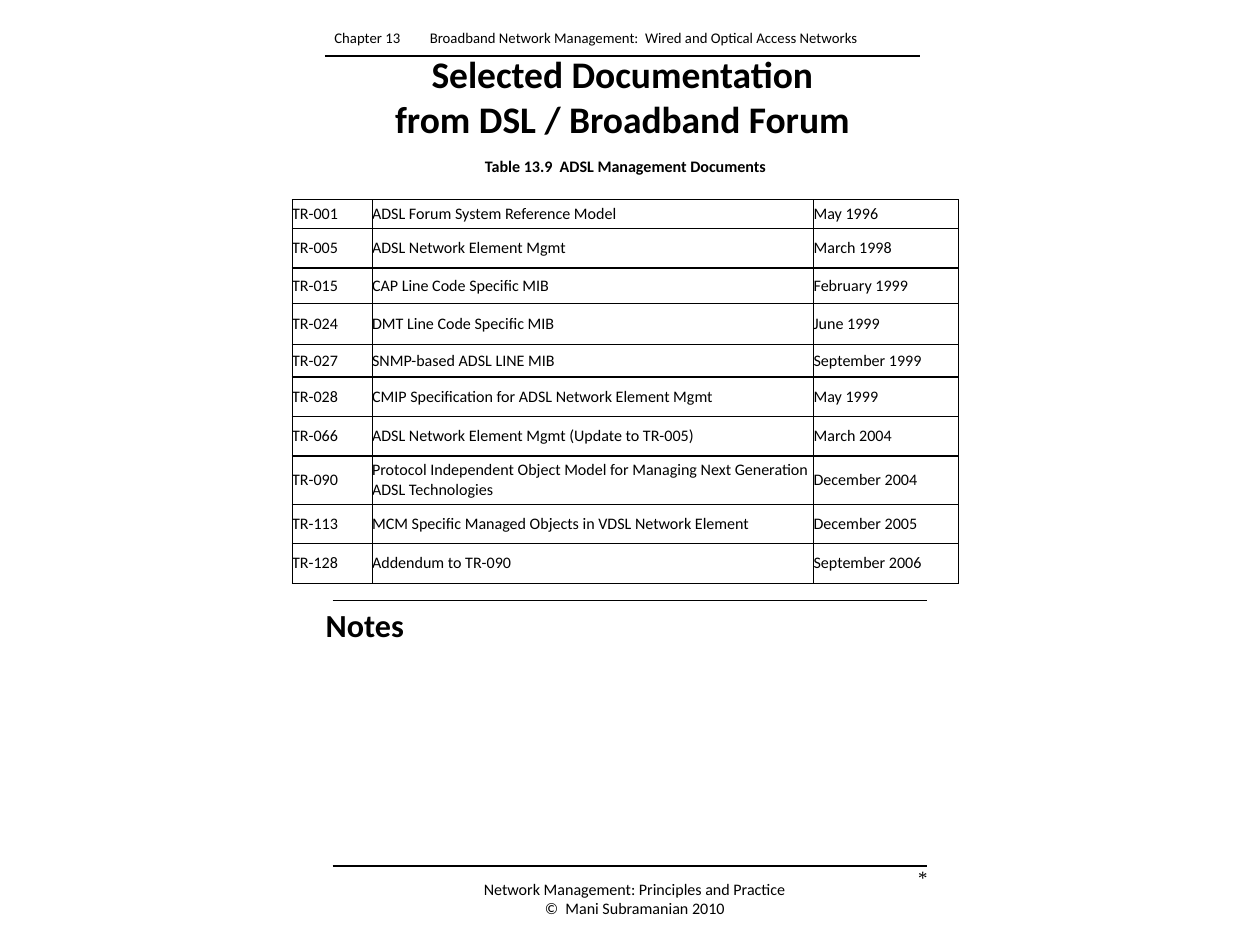
from lxml import etree
from pptx import Presentation
from pptx.dml.color import RGBColor
from pptx.enum.shapes import MSO_CONNECTOR
from pptx.enum.text import MSO_ANCHOR, MSO_AUTO_SIZE, PP_ALIGN
from pptx.oxml.ns import qn
from pptx.util import Inches, Pt

LEFT, CENTER, RIGHT = PP_ALIGN.LEFT, PP_ALIGN.CENTER, PP_ALIGN.RIGHT
TOP, MIDDLE = MSO_ANCHOR.TOP, MSO_ANCHOR.MIDDLE
NO_FIT = MSO_AUTO_SIZE.NONE
STRAIGHT = MSO_CONNECTOR.STRAIGHT

DOCS = [
    ("TR-001", "ADSL Forum System Reference Model", "May 1996"),
    ("TR-005", "ADSL Network Element Mgmt", "March 1998"),
    ("TR-015", "CAP Line Code Specific MIB", "February 1999"),
    ("TR-024", "DMT Line Code Specific MIB", "June 1999"),
    ("TR-027", "SNMP-based ADSL LINE MIB", "September 1999"),
    ("TR-028", "CMIP Specification for ADSL Network Element Mgmt", "May 1999"),
    ("TR-066", "ADSL Network Element Mgmt (Update to TR-005)", "March 2004"),
    ("TR-090", "Protocol Independent Object Model for Managing Next "
     "Generation ADSL Technologies", "December 2004"),
    ("TR-113", "MCM Specific Managed Objects in VDSL Network Element",
     "December 2005"),
    ("TR-128", "Addendum to TR-090", "September 2006"),
]
WIDTHS = [0.83, 4.58, 1.5]
HEIGHTS = [0.3, 0.41, 0.37, 0.42, 0.34, 0.41, 0.41, 0.5, 0.41, 0.41]


def color(value):
    return RGBColor.from_string(value)


class Page:
    font = "Calibri"
    ink = "000000"

    def __init__(self, slide):
        self.slide = slide

    def put(self, para, text, size, bold=False, font=None, align=LEFT):
        para.alignment = align
        for i, line in enumerate(text.split("\n")):
            if i:
                para.add_line_break()
            run = para.add_run()
            run.text = line
            run.font.size = Pt(size)
            run.font.name = font or self.font
            run.font.bold = bold
            run.font.color.rgb = color(self.ink)

    def title(self, box, text, size):
        shape = self.slide.shapes.title
        shape.left, shape.top, shape.width, shape.height = map(Inches, box)
        frame = shape.text_frame
        frame.auto_size = NO_FIT
        frame.vertical_anchor = MIDDLE
        self.put(frame.paragraphs[0], text, size, True, align=CENTER)

    def text(self, box, lines, size, **style):
        frame = self.slide.shapes.add_textbox(*map(Inches, box)).text_frame
        frame.word_wrap = True
        frame.vertical_anchor = TOP
        for i, line in enumerate(lines):
            para = frame.add_paragraph() if i else frame.paragraphs[0]
            self.put(para, line, size, **style)
        return frame

    def rule(self, x, y, width):
        line = self.slide.shapes.add_connector(
            STRAIGHT, *map(Inches, (x, y, x + width, y)))
        line.line.color.rgb = color(self.ink)
        line.line.width = Pt(1)
        etree.SubElement(line._element.spPr, qn("a:effectLst"))

    def border(self, cell):
        props = cell._tc.get_or_add_tcPr()
        for side in ("lnL", "lnR", "lnT", "lnB"):
            line = etree.SubElement(props, qn("a:" + side), w=str(Pt(1)))
            fill = etree.SubElement(line, qn("a:solidFill"))
            etree.SubElement(fill, qn("a:srgbClr"), val=self.ink)

    def table(self, x, y, data, widths, heights, size):
        box = map(Inches, (x, y, sum(widths), sum(heights)))
        table = self.slide.shapes.add_table(
            len(data), len(widths), *box).table
        table.first_row = table.horz_banding = False
        for col, width in zip(table.columns, widths):
            col.width = Inches(width)
        for row, height, texts in zip(table.rows, heights, data):
            row.height = Inches(height)
            for cell, text in zip(row.cells, texts):
                cell.margin_left = cell.margin_right = 0
                cell.margin_top = cell.margin_bottom = 0
                cell.vertical_anchor = MIDDLE
                self.border(cell)
                cell.fill.background()
                self.put(cell.text_frame.paragraphs[0], text, size)


def add_tab(para, pos):
    """Set one left tab stop, in inches from the text edge."""
    tabs = etree.SubElement(para._p.get_or_add_pPr(), qn("a:tabLst"))
    etree.SubElement(tabs, qn("a:tab"), pos=str(Inches(pos)), algn="l")


def main():
    prs = Presentation()
    prs.slide_width, prs.slide_height = Inches(13.07), Inches(9.8)
    page = Page(prs.slides.add_slide(prs.slide_layouts[5]))

    page.title((3.37, 0.57, 6.17, 0.86),
               "Selected Documentation\nfrom DSL / Broadband Forum", 28)
    page.table(3.03, 2.07, DOCS, WIDTHS, HEIGHTS, 12)
    for x, y in ((3.37, 0.58), (3.45, 6.23), (3.45, 8.98)):
        page.rule(x, y, 6.17)

    head = page.text(
        (3.37, 0.25, 6.23, 0.29),
        ["Chapter 13\tBroadband Network Management:  "
         "Wired and Optical Access Networks"], 11)
    add_tab(head.paragraphs[0], 0.99)
    page.text((3.03, 1.57, 6.92, 0.3),
              ["Table 13.9  ADSL Management Documents"], 12,
              bold=True, align=CENTER)
    page.text((3.28, 6.23, 1.17, 0.5), ["Notes"], 24, bold=True)
    page.text((4.78, 9.07, 3.61, 0.5),
              ["Network Management: Principles and Practice",
               "©  Mani Subramanian 2010"], 12, align=CENTER)
    page.text((8.16, 8.93, 1.56, 0.65), ["*"], 14,
              font="Times New Roman", align=RIGHT)
    prs.save("out.pptx")


if __name__ == "__main__":
    main()
